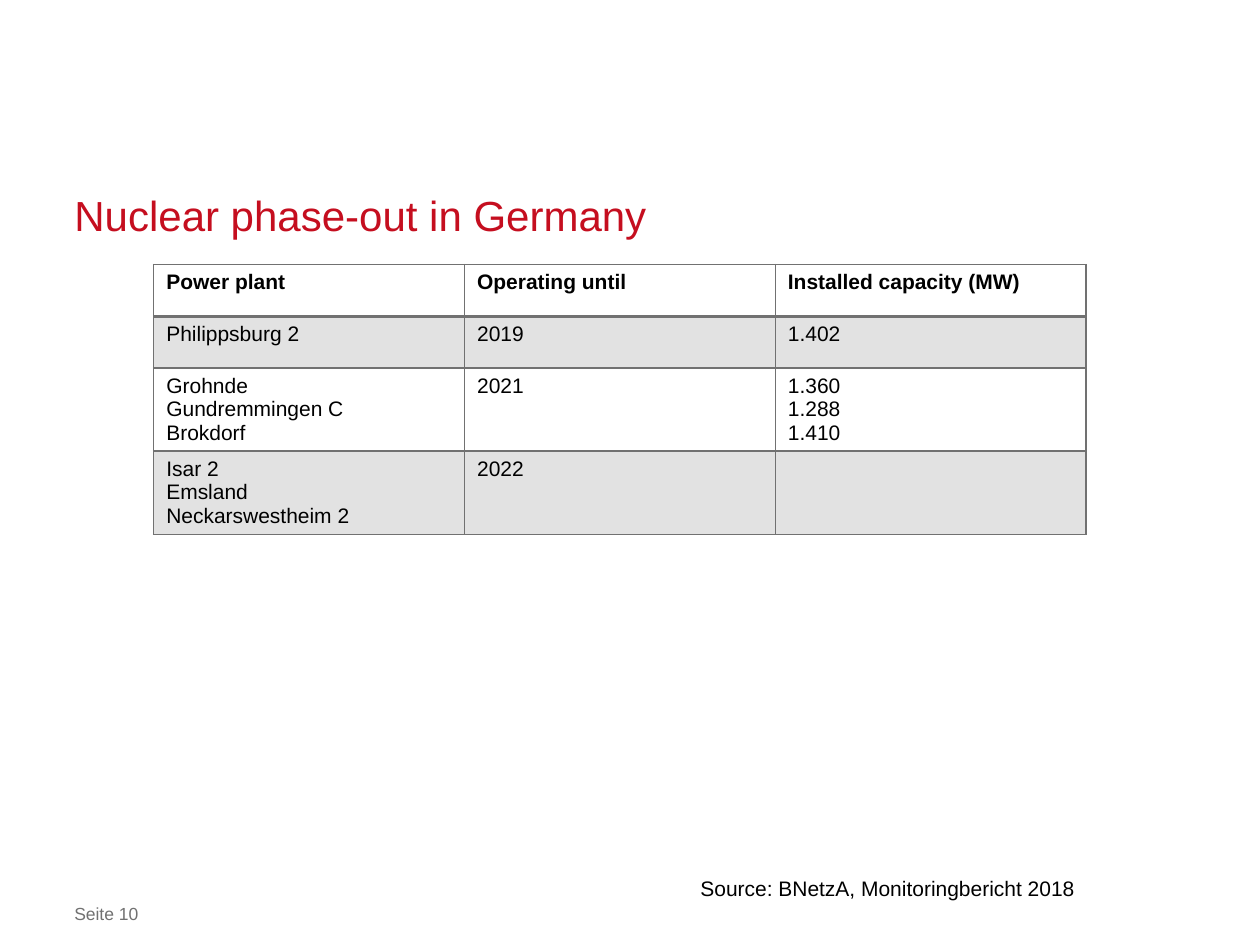
from lxml import etree
from pptx import Presentation
from pptx.dml.color import RGBColor
from pptx.enum.text import MSO_ANCHOR, PP_ALIGN
from pptx.oxml.ns import qn
from pptx.util import Inches, Pt

LEFT, RIGHT = PP_ALIGN.LEFT, PP_ALIGN.RIGHT
TOP, BOTTOM = MSO_ANCHOR.TOP, MSO_ANCHOR.BOTTOM
BLACK, GREY, RED = "000000", "717171", "C50E1F"
BAND_OPACITY = 20
MARGINS = ("margin_left", "margin_top", "margin_right", "margin_bottom")

PLANT_ROWS = [
    ["Power plant", "Operating until", "Installed capacity (MW)"],
    ["Philippsburg 2", "2019", "1.402"],
    ["Grohnde\nGundremmingen C\nBrokdorf", "2021", "1.360\n1.288\n1.410"],
    ["Isar 2\nEmsland\nNeckarswestheim 2", "2022", ""],
]
ROW_HEIGHTS = [0.41, 0.41, 0.66, 0.66]


def color(value):
    return RGBColor.from_string(value)


def apply(target, values):
    for name, value in values.items():
        setattr(target, name, value)


class SlideBuilder:
    def __init__(self, page, font="Arial"):
        self.page = page
        self.font = font

    def fill_text(self, frame, text, size, ink=BLACK, bold=False, **para_format):
        """Fill a text frame, one paragraph per line of text."""
        frame.text = text
        for para in frame.paragraphs:
            apply(para, para_format)
            apply(para.font, {"name": self.font, "size": Pt(size), "bold": bold})
            para.font.color.rgb = color(ink)

    def text(self, area, text, size, ink=BLACK, anchor=TOP, inset=None, **para_format):
        box = self.page.shapes.add_textbox(*map(Inches, area))
        frame = box.text_frame
        apply(frame, {"word_wrap": True, "vertical_anchor": anchor})
        if inset is not None:
            apply(frame, {side: Inches(inset) for side in MARGINS})
        self.fill_text(frame, text, size, ink, **para_format)

    def border(self, cell, side, width):
        line = etree.SubElement(cell._tc.get_or_add_tcPr(), qn(f"a:ln{side}"), w=str(Pt(width)))
        fill = etree.SubElement(line, qn("a:solidFill"))
        etree.SubElement(fill, qn("a:srgbClr"), val=GREY)

    def shade(self, cell):
        cell.fill.solid()
        cell.fill.fore_color.rgb = color(GREY)
        tint = cell._tc.tcPr.find(qn("a:solidFill")).find(qn("a:srgbClr"))
        etree.SubElement(tint, qn("a:alpha"), val=str(BAND_OPACITY * 1000))

    def table(self, left, top, width, rows, heights):
        area = map(Inches, (left, top, width, sum(heights)))
        table = self.page.shapes.add_table(len(rows), len(rows[0]), *area).table
        for row, height in zip(table.rows, heights):
            row.height = Inches(height)
        for r, texts in enumerate(rows):
            for c, text in enumerate(texts):
                cell = table.cell(r, c)
                self.fill_text(cell.text_frame, text, 12, bold=r == 0, alignment=LEFT)
                widths = {"L": 1, "R": 1, "T": 2 if r == 1 else 1, "B": 2 if r == 0 else 1}
                for side, line_width in widths.items():
                    self.border(cell, side, line_width)
                if r % 2:
                    self.shade(cell)
                else:
                    cell.fill.background()


def main():
    deck = Presentation()
    apply(deck, {"slide_width": Inches(10), "slide_height": Inches(7.5)})
    builder = SlideBuilder(deck.slides.add_slide(deck.slide_layouts[6]))
    builder.table(1.22, 2.1, 7.4, PLANT_ROWS, ROW_HEIGHTS)
    builder.text((0.59, 7.17, 7.24, 0.17), "Seite 10", 10, GREY, inset=0)
    builder.text((0.59, 1.51, 8.82, 0.39), "Nuclear phase-out in Germany", 24, RED,
                 anchor=BOTTOM, inset=0, line_spacing=Pt(30))
    builder.text((5.24, 6.9, 3.39, 0.3), "Source: BNetzA, Monitoringbericht 2018", 12,
                 alignment=RIGHT)
    deck.save("out.pptx")


if __name__ == "__main__":
    main()
